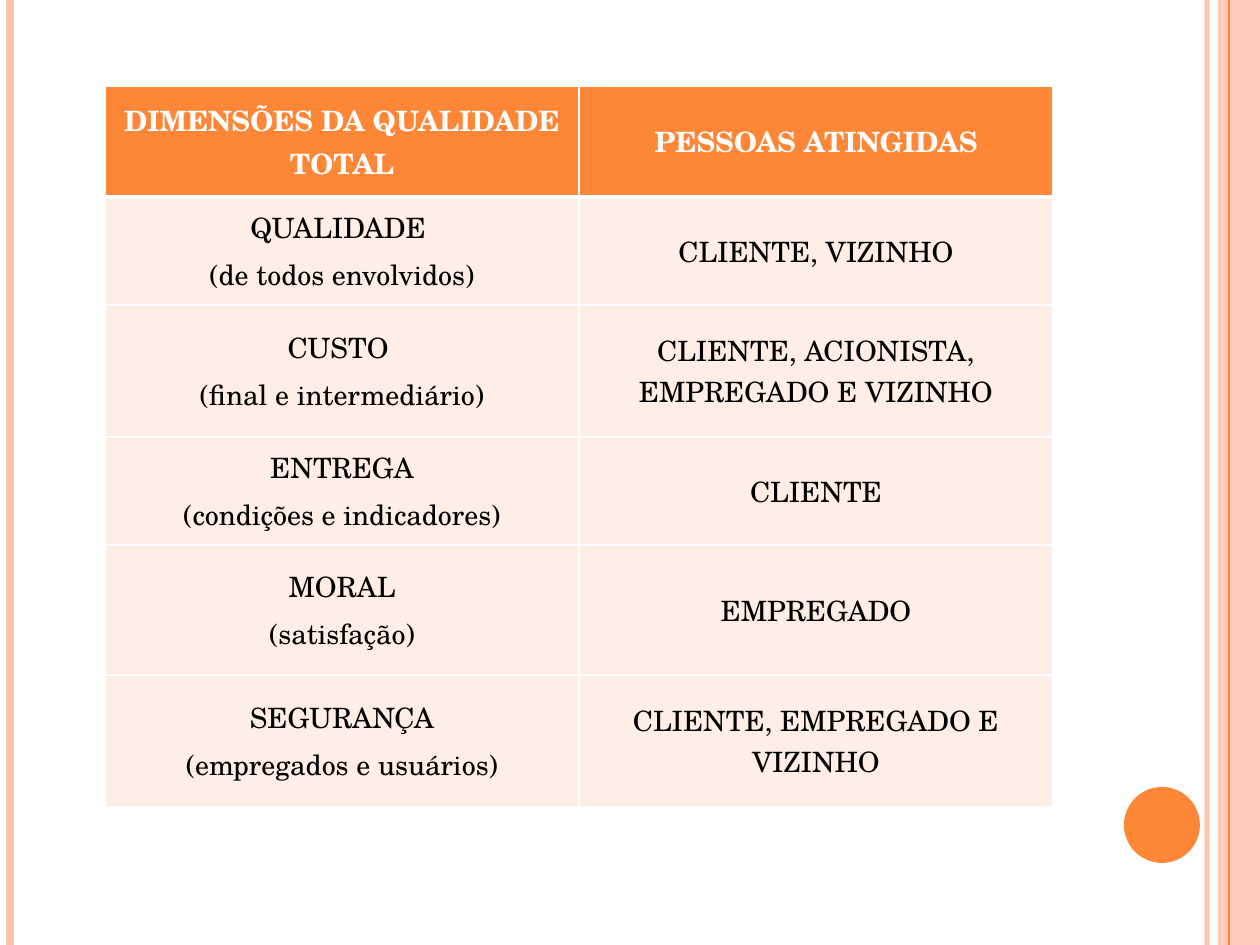
"""Build a slide with a table of total quality dimensions and the people they reach."""
from lxml.etree import SubElement
from pptx import Presentation
from pptx.dml.color import RGBColor as RGB
from pptx.enum.shapes import MSO_CONNECTOR as CONN, MSO_SHAPE as SHAPE
from pptx.enum.text import MSO_ANCHOR as ANCHOR, PP_ALIGN as ALIGN
from pptx.oxml.ns import qn
from pptx.util import Emu, Pt

COLORS = {"orange": "FE8637", "peach": "FEC3AE", "pale": "FFEDE8",
          "white": "FFFFFF", "black": "000000"}
FONT = "TeX Gyre Schola"
WIDTH, HEIGHT = 1260, 945
ROW_HEIGHTS = [111, 108, 132, 108, 130, 132]
ROWS = [
    ("DIMENSÕES DA QUALIDADE TOTAL", "PESSOAS ATINGIDAS"),
    ("QUALIDADE \n(de todos envolvidos)", "CLIENTE, VIZINHO"),
    ("CUSTO \n(final e intermediário)", "CLIENTE, ACIONISTA, EMPREGADO E VIZINHO"),
    ("ENTREGA\n(condições e indicadores)", "CLIENTE"),
    ("MORAL\n(satisfação)", "EMPREGADO"),
    ("SEGURANÇA\n(empregados e usuários)", "CLIENTE, EMPREGADO E VIZINHO"),
]


def px(n):
    return Emu(round(n * 914400 / 126))


def rgb(name):
    return RGB.from_string(COLORS[name])


def write(tf, text, size=16, color="black", bold=False, align=ALIGN.CENTER, before=3.2):
    for i, line in enumerate(text.split("\n")):
        p = tf.add_paragraph() if i else tf.paragraphs[0]
        p.alignment, p.space_before = align, Pt(before)
        r = p.add_run()
        r.text = line
        r.font.name, r.font.size, r.font.bold = FONT, Pt(size), bold
        r.font.color.rgb = rgb(color)


def set_alpha(parent, percent):
    for clr in parent.iter(qn("a:srgbClr")):
        SubElement(clr, qn("a:alpha"), val=str(percent * 1000))


class Deck:
    def __init__(self):
        self.prs = Presentation()
        self.prs.slide_width, self.prs.slide_height = px(WIDTH), px(HEIGHT)
        self.s = self.prs.slides.add_slide(self.prs.slide_layouts[6])

    def stripe(self, x, color, width, alpha=100):
        ln = self.s.shapes.add_connector(CONN.STRAIGHT, px(x), 0, px(x), px(HEIGHT))
        ln.line.color.rgb, ln.line.width = rgb(color), Pt(width)
        sp_pr = ln._element.spPr
        if alpha < 100:
            set_alpha(sp_pr, alpha)
        SubElement(sp_pr, qn("a:effectLst"))

    def shape(self, kind, x, y, w, h, color, alpha=100):
        sp = self.s.shapes.add_shape(kind, px(x), px(y), px(w), px(h))
        sp.shadow.inherit = False
        sp.fill.solid()
        sp.fill.fore_color.rgb = rgb(color)
        sp.line.fill.background()
        if alpha < 100:
            set_alpha(sp._element.spPr, alpha)

    def borders(self, cell, bottom, top):
        tc_pr = cell._tc.get_or_add_tcPr()
        for i, (side, width) in enumerate(zip("LRTB", (1, 1, top, bottom))):
            ln = tc_pr.makeelement(qn(f"a:ln{side}"), w=str(Pt(width)))
            fill = SubElement(ln, qn("a:solidFill"))
            SubElement(fill, qn("a:srgbClr"), val=COLORS["white"])
            tc_pr.insert(i, ln)

    def table(self, x, y, col_width, heights, rows):
        cols = len(rows[0])
        tbl = self.s.shapes.add_table(len(rows), cols, px(x), px(y),
                                      px(col_width * cols), px(sum(heights))).table
        for col in tbl.columns:
            col.width = px(col_width)
        for i, (texts, height) in enumerate(zip(rows, heights)):
            head = i == 0
            tbl.rows[i].height = px(height)
            for j, text in enumerate(texts):
                cell = tbl.cell(i, j)
                cell.vertical_anchor = ANCHOR.MIDDLE
                cell.fill.solid()
                cell.fill.fore_color.rgb = rgb("orange" if head else "pale")
                self.borders(cell, bottom=3 if head else 1, top=3 if i == 1 else 1)
                write(cell.text_frame, text, color="white" if head else "black", bold=head)


def main():
    deck = Deck()
    deck.stripe(1207, "peach", 3, alpha=93)
    deck.stripe(10, "peach", 4.5)
    deck.stripe(1229, "orange", 1.5)
    deck.shape(SHAPE.RECTANGLE, 1218, 0, 42, HEIGHT, "peach", alpha=87)
    deck.stripe(1229, "orange", 0.75)
    deck.shape(SHAPE.OVAL, 1124, 787, 76, 76, "orange")
    deck.table(105, 86, 474, ROW_HEIGHTS, ROWS)
    deck.prs.save("out.pptx")


if __name__ == "__main__":
    main()
